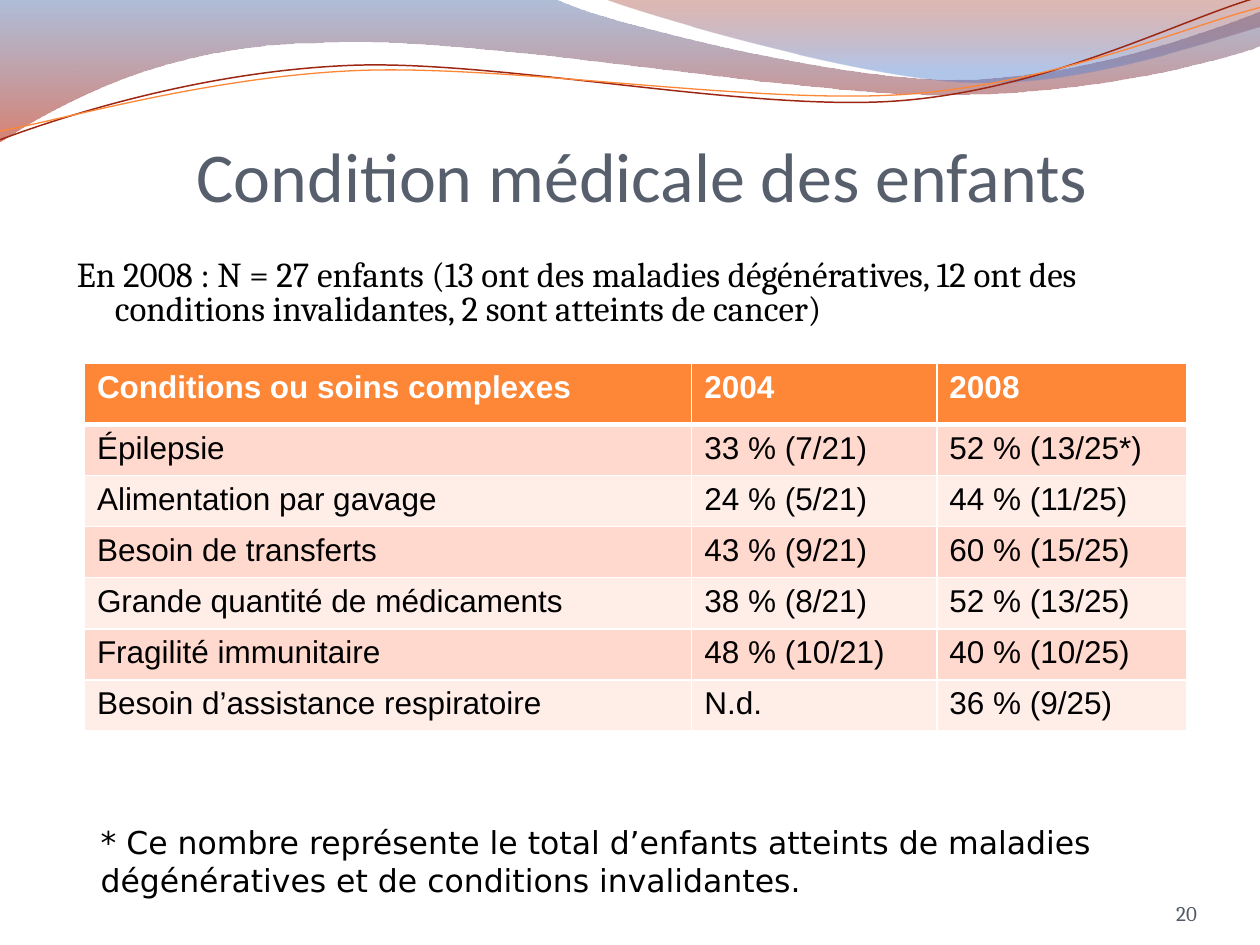
import pptx
import pptx.util
import pptx.dml.color
import pptx.enum.text
import pptx.oxml
import pptx.oxml.ns
from lxml import etree

Pt = pptx.util.Pt
RGBColor = pptx.dml.color.RGBColor
ALIGN = pptx.enum.text.PP_ALIGN
ANCHOR = pptx.enum.text.MSO_ANCHOR
qn = pptx.oxml.ns.qn

WHITE = RGBColor(0xFF, 0xFF, 0xFF)
BLACK = RGBColor(0x00, 0x00, 0x00)
SLATE = RGBColor(0x57, 0x5F, 0x6D)
NUMBER_GREY = RGBColor(0x53, 0x5B, 0x68)
ORANGE = RGBColor(0xFE, 0x86, 0x37)
BRICK = RGBColor(0x9E, 0x27, 0x13)
PEACH = RGBColor(0xFF, 0xD9, 0xCE)
PALE_PEACH = RGBColor(0xFF, 0xED, 0xE8)
DEEP_BLUE = RGBColor(0x4F, 0x6E, 0xA8)
SKY_BLUE = RGBColor(0x56, 0x81, 0xD1)
RED = RGBColor(0xB6, 0x1A, 0x00)
DARK_RED = RGBColor(0x95, 0x15, 0x00)

deck = pptx.Presentation()
deck.slide_width, deck.slide_height = pptx.util.Inches(10), pptx.util.Inches(7.5)
# The slide is a grid of 100 columns by 75 rows
COL, ROW = deck.slide_width // 100, deck.slide_height // 75
slide = deck.slides.add_slide(deck.slide_layouts[5])


def draw_wave(start, *steps):
    """Outline from grid points; a step is a line (2 numbers) or a Bézier curve (6)."""
    points = [start] + [step[i:i + 2] for step in steps for i in range(0, len(step), 2)]
    corners = [(round(x * COL), round(y * ROW)) for x, y in points]
    builder = slide.shapes.build_freeform(*corners[0])
    builder.add_line_segments(corners[1:], close=points[-1] == start)
    wave = builder.convert_to_shape()
    wave.shadow.inherit = False
    # Join each run of three segments that belongs to a curve
    segments = iter(list(wave.element.spPr.iter(qn("a:lnTo"))))
    for step in steps:
        segment = next(segments)
        if len(step) == 6:
            curve = etree.Element(qn("a:cubicBezTo"))
            segment.addprevious(curve)
            for part in (segment, next(segments), next(segments)):
                curve.append(part[0])
                part.getparent().remove(part)
    return wave


def write(frame, text, font, size, color, align=ALIGN.LEFT, bold=False):
    frame.word_wrap = True
    paragraph = frame.paragraphs[0]
    paragraph.text = text
    paragraph.alignment = align
    run = paragraph.runs[0]
    run.font.name, run.font.size, run.font.bold = font, Pt(size), bold
    run.font.color.rgb = color
    return paragraph


# Translucent bands across the top
left_band = draw_wave(
    (0, -0.1), (44, -0.1), (47.6, 1.7, 66.4, 6.3, 75.8, 6.3),
    (85.3, 6.3, 95.8, 2.6, 100, 0.9), (100.1, 3.6),
    (98.3, 4.4, 87, 7.6, 74.6, 7.5), (62.2, 7.5, 38.2, 2.8, 25.7, 3.4),
    (12.9, 3.5, 4.6, 8.3, -0.1, 11.3), (0, -0.1))
right_band = draw_wave(
    (47.9, -0.1), (50.9, 1.1, 68.2, 6.2, 76.9, 6.5),
    (85.6, 6.9, 96.1, 3.2, 100, 2.1), (100, 0), (47.9, -0.1))
for band, stops in (
        (left_band, ((0, DEEP_BLUE, 45), (1, RED, 55))),
        (right_band, ((0, DARK_RED, 30), (0.8, SKY_BLUE, 45)))):
    band.line.fill.background()
    band.fill.gradient()
    band.fill.gradient_angle = 270
    for stop, (position, color, _) in zip(band.fill.gradient_stops, stops):
        stop.position, stop.color.rgb = position, color
    for tint, (_, _, opacity) in zip(band.element.spPr.iter(qn("a:srgbClr")), stops):
        etree.SubElement(tint, qn("a:alpha"), val=str(opacity * 1000))

# Thin wavy lines, tilted slightly
brick_line = draw_wave(
    (-0.2, 8.74), (4.68, 7.17, 15.84, 4.09, 27.75, 4.15),
    (39.56, 4.21, 59.14, 9.34, 71.17, 9.01), (83.2, 8.67, 93.95, 3.57, 100.03, 2.16))
orange_line = draw_wave(
    (-0.16, 8.04), (4.58, 7.46, 16.43, 4.52, 28.34, 4.58),
    (40.35, 4.65, 59.58, 8.76, 71.6, 8.52), (83.53, 8.28, 94.23, 4.18, 100.19, 2.96))
for wavy, color, weight in ((brick_line, BRICK, 0.85), (orange_line, ORANGE, 0.75)):
    wavy.rotation = 357.3
    wavy.fill.background()
    wavy.line.color.rgb, wavy.line.width = color, Pt(weight)

# Title
title = slide.shapes.title
title.left, title.top = 5 * COL, 7 * ROW
title.width, title.height = round(91.9 * COL), round(10.2 * ROW)
heading = title.text_frame
heading.vertical_anchor = ANCHOR.BOTTOM
heading.margin_left = heading.margin_right = heading.margin_bottom = 0
heading.auto_size = pptx.enum.text.MSO_AUTO_SIZE.NONE
write(heading, "Condition médicale des enfants", "Calibri", 40, SLATE, ALIGN.CENTER)

# Sample description, with a hanging indent
sample = slide.shapes.add_textbox(round(5.13 * COL), round(20.2 * ROW), 90 * COL, round(6.7 * ROW))
description = write(
    sample.text_frame,
    "En 2008 : N = 27 enfants (13 ont des maladies dégénératives, 12 ont des "
    "conditions invalidantes, 2 sont atteints de cancer)", "Cambria", 20, BLACK)
description.line_spacing, description.space_before = 0.8, Pt(4)
indent = description._p.get_or_add_pPr()
indent.set("marL", str(3 * COL))
indent.set("indent", str(-3 * COL))

# Table of conditions
conditions = (
    ("Conditions ou soins complexes", "2004", "2008"),
    ("Épilepsie", "33 % (7/21)", "52 % (13/25*)"),
    ("Alimentation par gavage", "24 % (5/21)", "44 % (11/25)"),
    ("Besoin de transferts", "43 % (9/21)", "60 % (15/25)"),
    ("Grande quantité de médicaments", "38 % (8/21)", "52 % (13/25)"),
    ("Fragilité immunitaire", "48 % (10/21)", "40 % (10/25)"),
    ("Besoin d’assistance respiratoire", "N.d.", "36 % (9/25)"),
)
table = slide.shapes.add_table(len(conditions), 3, round(6.7 * COL), round(28.85 * ROW),
                               round(87.5 * COL), round(29.2 * ROW)).table
for column, width in zip(table.columns, (48.2, 19.46, 19.84)):
    column.width = round(width * COL)
for r, entries in enumerate(conditions):
    header = r == 0
    table.rows[r].height = round((4.82 if header else 4.06) * ROW)
    for c, entry in enumerate(entries):
        cell = table.cell(r, c)
        write(cell.text_frame, entry, "Arial", 18, WHITE if header else BLACK, bold=header)
        properties = cell._tc.get_or_add_tcPr()
        for side in "LRTB":
            thick = (header and side == "B") or (r == 1 and side == "T")
            border = etree.SubElement(properties, qn("a:ln" + side), w=str(Pt(3 if thick else 1)))
            paint = etree.SubElement(border, qn("a:solidFill"))
            etree.SubElement(paint, qn("a:srgbClr"), val=str(WHITE))
        cell.fill.solid()
        cell.fill.fore_color.rgb = ORANGE if header else PEACH if r % 2 else PALE_PEACH

# Footnote
footnote = slide.shapes.add_textbox(7 * COL, round(64.83 * ROW), round(87.5 * COL), round(7.1 * ROW))
write(footnote.text_frame,
      "* Ce nombre représente le total d’enfants atteints de maladies "
      "dégénératives et de conditions invalidantes.", "DejaVu Sans", 18, BLACK)

# Slide number
page = slide.shapes.add_textbox(round(86.7 * COL), round(69.5 * ROW), round(8.3 * COL), 4 * ROW)
number = page.text_frame
number.margin_left = number.margin_right = number.margin_top = number.margin_bottom = 0
number.vertical_anchor = ANCHOR.BOTTOM
write(number, "20", "Cambria", 12, NUMBER_GREY, ALIGN.RIGHT)

deck.save("out.pptx")
